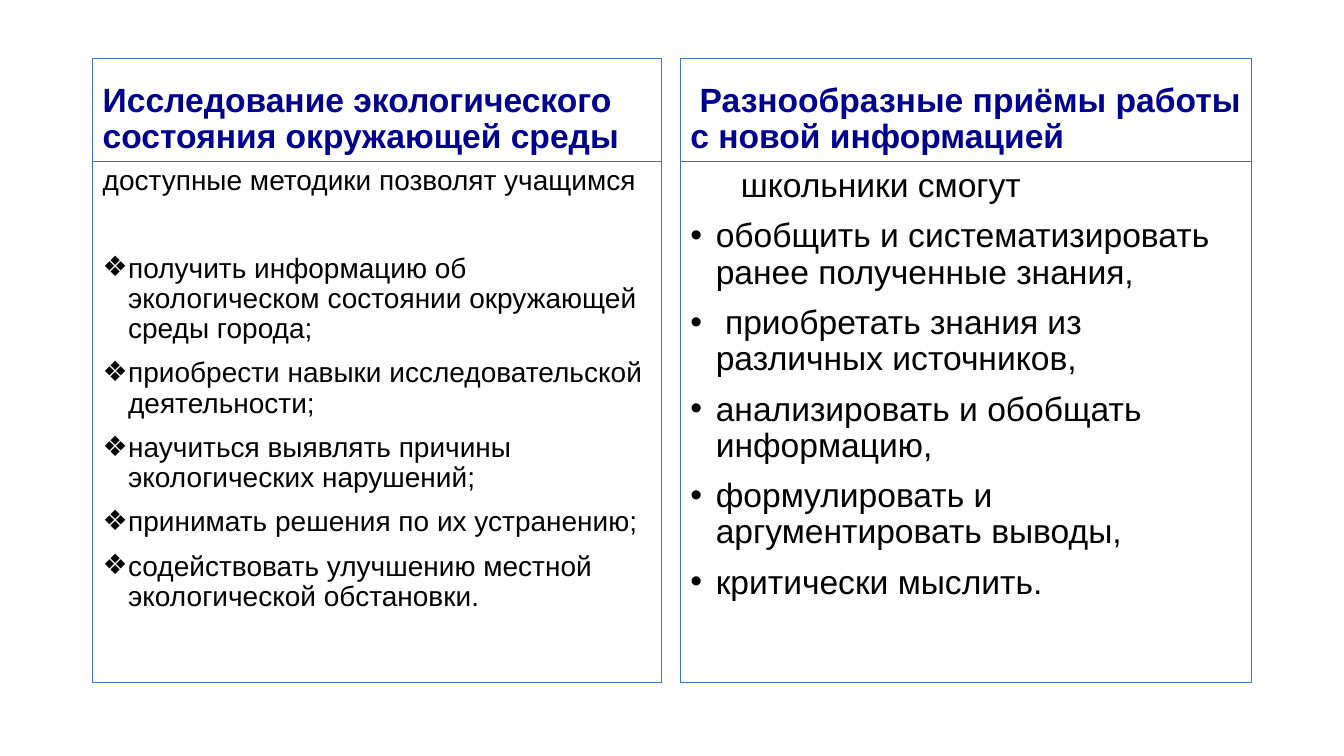
import pptx
import pptx.dml.color
import pptx.enum.shapes
import pptx.enum.text
import pptx.oxml.ns
import pptx.util
from lxml import etree

Cm, Pt = pptx.util.Cm, pptx.util.Pt
ANCHOR = pptx.enum.text.MSO_ANCHOR
FONT, EDGE, NAVY, BLACK = "Arial", "4472C4", "000090", "000000"
TOP, HEAD, BODY = 1.47, 2.59, 13.13
HANG = 0.64

LEFT = {
    "head": "Исследование экологического состояния окружающей среды",
    "lead": "доступные методики позволят учащимся",
    "items": [
        "получить информацию об экологическом состоянии окружающей среды города;",
        "приобрести навыки исследовательской деятельности;",
        "научиться выявлять причины экологических нарушений;",
        "принимать решения по их устранению;",
        "содействовать улучшению местной экологической обстановки.",
    ],
    "mark": "❖", "size": 20, "indent": 0, "gap": 41, "inset": 0.13,
}
RIGHT = {
    "head": " Разнообразные приёмы работы с новой информацией",
    "lead": "школьники смогут",
    "items": [
        "обобщить и систематизировать ранее полученные знания,",
        " приобретать знания из различных источников,",
        "анализировать и обобщать информацию,",
        "формулировать и аргументировать выводы,",
        "критически мыслить.",
    ],
    "mark": "•", "size": 24, "indent": 1.27, "gap": 10, "inset": 0.19,
}


def color(code):
    return pptx.dml.color.RGBColor.from_string(code)


def add_box(slide, x, y, w, h, anchor, inset=0.13):
    """Draw an outlined box and return its text frame."""
    box = slide.shapes.add_shape(
        pptx.enum.shapes.MSO_SHAPE.RECTANGLE, Cm(x), Cm(y), Cm(w), Cm(h))
    box.shadow.inherit = False
    box.fill.background()
    box.line.color.rgb = color(EDGE)
    box.line.width = Pt(0.75)
    frame = box.text_frame
    frame.word_wrap = True
    frame.vertical_anchor = anchor
    frame.margin_left = frame.margin_right = Cm(0.25)
    frame.margin_top, frame.margin_bottom = Cm(inset), Cm(0.13)
    return frame


def add_text(para, text, size, code, bold=False, gap=10):
    para.alignment = pptx.enum.text.PP_ALIGN.LEFT
    para.line_spacing = 0.9
    para.space_before = Pt(gap)
    run = para.add_run()
    run.text = text
    run.font.name = FONT
    run.font.size = Pt(size)
    run.font.bold = bold
    run.font.color.rgb = color(code)


def set_indent(para, left, first):
    props = para._p.get_or_add_pPr()
    props.set("marL", str(Cm(left)))
    props.set("indent", str(Cm(first)))
    return props


def add_mark(para, mark):
    """Give the paragraph a hanging bullet."""
    props = set_indent(para, HANG, -HANG)
    qn = pptx.oxml.ns.qn
    etree.SubElement(props, qn("a:buFont"), typeface=FONT)
    etree.SubElement(props, qn("a:buChar"), char=mark)


def add_panel(slide, x, w, data):
    """Place a heading box with a list box right below it."""
    head = add_box(slide, x, TOP, w, HEAD, ANCHOR.BOTTOM)
    add_text(head.paragraphs[0], data["head"], 24, NAVY, bold=True)

    body = add_box(slide, x, TOP + HEAD, w, BODY, ANCHOR.TOP, data["inset"])
    lead = body.paragraphs[0]
    add_text(lead, data["lead"], data["size"], BLACK)
    set_indent(lead, 0, data["indent"])
    for i, item in enumerate(data["items"]):
        para = body.add_paragraph()
        gap = 10 if i else data["gap"]
        add_text(para, item, data["size"], BLACK, gap=gap)
        add_mark(para, data["mark"])


def main():
    deck = pptx.Presentation()
    deck.slide_width, deck.slide_height = Cm(33.87), Cm(19.05)
    slide = deck.slides.add_slide(deck.slide_layouts[6])
    add_panel(slide, 2.34, 14.33, LEFT)
    add_panel(slide, 17.15, 14.4, RIGHT)
    deck.save("out.pptx")


if __name__ == "__main__":
    main()
